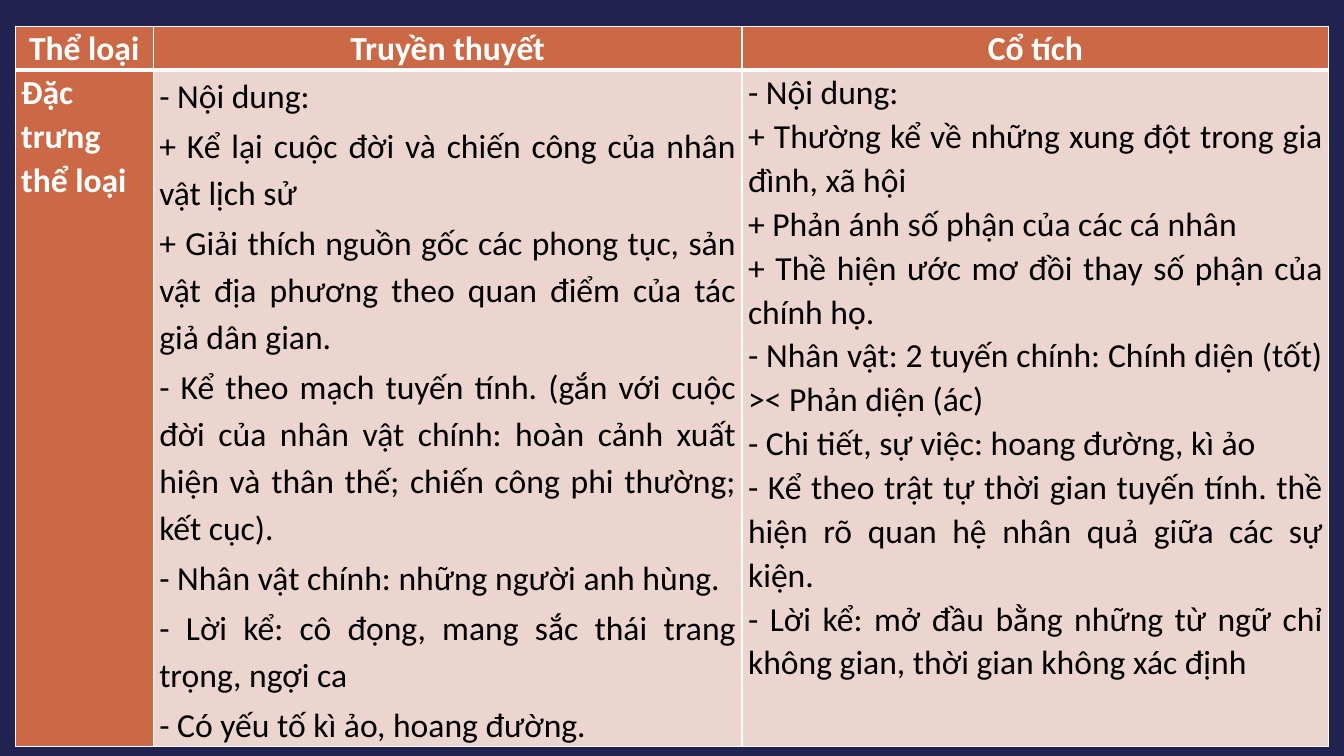
from pptx import Presentation
from pptx.dml.color import RGBColor
from pptx.enum.shapes import MSO_SHAPE
from pptx.enum.text import PP_ALIGN
from pptx.oxml.ns import qn
from pptx.util import Inches, Pt
from lxml.etree import SubElement

HEADS = ["Thể loại", "Truyền thuyết", "Cổ tích"]
LABEL = ["Đặc trưng thể loại"]
LEGEND = [
    "- Nội dung:",
    "+ Kể lại cuộc đời và chiến công của nhân vật lịch sử",
    "+ Giải thích nguồn gốc các phong tục, sản vật địa phương theo quan điểm "
    "của tác giả dân gian.",
    "- Kể theo mạch tuyến tính. (gắn với cuộc đời của nhân vật chính: hoàn cảnh "
    "xuất hiện và thân thế; chiến công phi thường; kết cục).",
    "- Nhân vật chính: những người anh hùng.",
    "- Lời kể: cô đọng, mang sắc thái trang trọng, ngợi ca",
    "- Có yếu tố kì ảo, hoang đường.",
]
TALE = [
    "- Nội dung:",
    "+ Thường kể về những xung đột trong gia đình, xã hội",
    "+ Phản ánh số phận của các cá nhân",
    "+ Thề hiện ước mơ đồi thay số phận của chính họ.",
    "- Nhân vật: 2 tuyến chính: Chính diện (tốt) >< Phản diện (ác)",
    "- Chi tiết, sự việc: hoang đường, kì ảo",
    "- Kể theo trật tự thời gian tuyến tính. thề hiện rõ quan hệ nhân quả giữa "
    "các sự kiện.",
    "- Lời kể: mở đầu bằng những từ ngữ chỉ không gian, thời gian không xác định",
]
ROWS = [[[head] for head in HEADS], [LABEL, LEGEND, TALE]]

COLORS = {"back": "171735", "veil": "242453", "head": "CB6845",
          "body": "ECD4CF", "white": "FFFFFF", "black": "000000"}
WIDE, HIGH = 13.33, 7.5
LEFT, TOP = 0.15, 0.26
COLS = [1.37, 5.84, 5.82]
TALL = [0.43, 6.71]


def color(name):
    return RGBColor.from_string(COLORS[name])


def paint(fill, name):
    fill.solid()
    fill.fore_color.rgb = color(name)


def edge(cell, base):
    """Draw white borders; base is the bottom width in points."""
    props = cell._tc.get_or_add_tcPr()
    sides = zip(("a:lnL", "a:lnR", "a:lnT", "a:lnB"), (1, 1, 1, base))
    for spot, (tag, size) in enumerate(sides):
        line = props.makeelement(qn(tag), {"w": str(Pt(size))})
        fill = SubElement(line, qn("a:solidFill"))
        SubElement(fill, qn("a:srgbClr"), val=COLORS["white"])
        props.insert(spot, line)


def write(cell, lines, row, col):
    label = row == 0 or col == 0
    paint(cell.fill, "head" if label else "body")
    cell.margin_left = cell.margin_right = Inches(0.06)
    cell.margin_top = cell.margin_bottom = 0
    cell.text = "\n".join(lines)
    loose = row == 1 and col == 1
    for para in cell.text_frame.paragraphs:
        para.alignment = PP_ALIGN.JUSTIFY if row else PP_ALIGN.CENTER
        para.line_spacing = 1.15 if loose else 1.07
        para.space_after = Pt(2 if loose else 0)
        para.font.name = "Calibri"
        para.font.size = Pt(24)
        para.font.bold = label
        para.font.color.rgb = color("white" if label else "black")
    edge(cell, 1 if row else 3)


deck = Presentation()
deck.slide_width, deck.slide_height = Inches(WIDE), Inches(HIGH)
slide = deck.slides.add_slide(deck.slide_layouts[6])

# Dark background under a nearly opaque veil
paint(slide.background.fill, "back")
veil = slide.shapes.add_shape(MSO_SHAPE.RECTANGLE, 0, 0,
                              deck.slide_width, deck.slide_height)
veil.shadow.inherit = False
veil.line.fill.background()
paint(veil.fill, "veil")
tint = veil._element.spPr.find(".//" + qn("a:srgbClr"))
SubElement(tint, qn("a:alpha"), val="90000")

# Comparison table
frame = slide.shapes.add_table(len(ROWS), len(COLS), Inches(LEFT), Inches(TOP),
                               Inches(sum(COLS)), Inches(sum(TALL)))
table = frame.table
for col, size in enumerate(COLS):
    table.columns[col].width = Inches(size)
for row, cells in enumerate(ROWS):
    table.rows[row].height = Inches(TALL[row])
    for col, lines in enumerate(cells):
        write(table.cell(row, col), lines, row, col)

deck.save("out.pptx")
